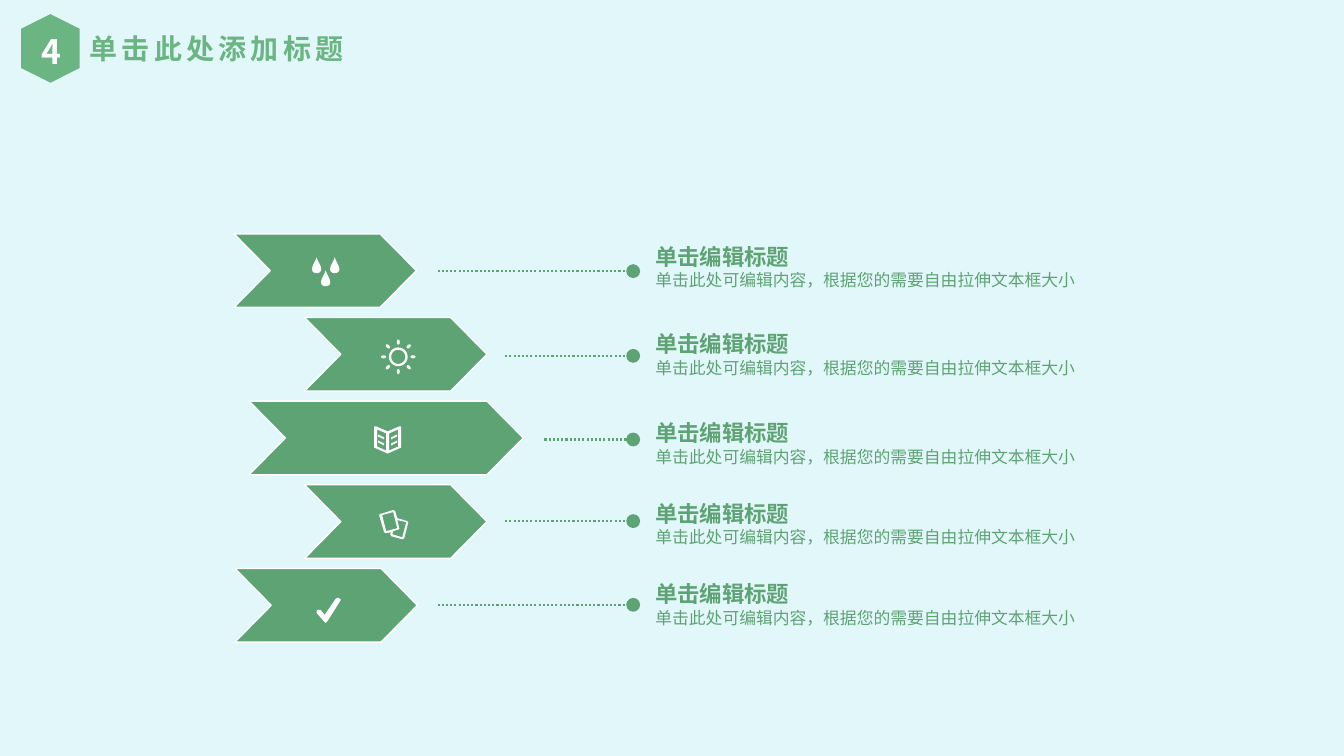
from math import cos, pi, sin

from lxml.etree import SubElement
from pptx import Presentation
from pptx.dml.color import RGBColor
from pptx.enum.dml import MSO_LINE
from pptx.enum.shapes import MSO_CONNECTOR as CONN, MSO_SHAPE as SHAPE
from pptx.enum.text import MSO_AUTO_SIZE as AUTO, PP_ALIGN as ALIGN
from pptx.oxml.ns import qn
from pptx.util import Inches, Pt

GREEN, LIGHT, WHITE, SKY = "5EA374", "6AB582", "FFFFFF", "E2F7FA"
CJK = "Noto Sans CJK SC"
HEADING = "单击编辑标题"
DETAIL = "单击此处可编辑内容，根据您的需要自由拉伸文本框大小"


def rgb(value):
    return RGBColor.from_string(value)


def paint(sp, fill, line=None):
    sp.shadow.inherit = False
    sp.fill.solid()
    sp.fill.fore_color.rgb = rgb(fill)
    if line:
        sp.line.color.rgb = rgb(line)
        sp.line.width = Pt(1)
    else:
        sp.line.fill.background()


def add_text(s, box, text, color, fmt, align=ALIGN.LEFT, inset=None, before=0, spacing=None):
    tf = s.shapes.add_textbox(*map(Inches, box)).text_frame
    tf.word_wrap = True
    tf.auto_size = AUTO.SHAPE_TO_FIT_TEXT
    if inset is not None:
        for side in ("left", "top", "right", "bottom"):
            setattr(tf, f"margin_{side}", Inches(inset))
    p = tf.paragraphs[0]
    p.alignment = align
    if before:
        p.space_before = Pt(before)
    r = p.add_run()
    r.text = text
    for key, value in fmt.items():
        setattr(r.font, key, value)
    r.font.color.rgb = rgb(color)
    props = r.font._element
    SubElement(props, qn("a:ea")).set("typeface", CJK)
    if spacing:
        props.set("spc", str(spacing))


def add_outline(s, left, top, contours, fill, line=None):
    scaled = [[(Inches(left + x), Inches(top + y)) for x, y in c] for c in contours]
    builder = s.shapes.build_freeform(*scaled[0][0])
    for i, points in enumerate(scaled):
        if i:
            builder.move_to(*points[0])
        builder.add_line_segments(points[1:], close=True)
    paint(builder.convert_to_shape(), fill, line)


def drop(cx, top):
    turns = [2 * pi * i / 32 for i in range(32)]
    return [(cx + 0.07 * sin(t) * sin(t / 2) ** 2, top + 0.08 * (1 - cos(t))) for t in turns]


def ellipse(cx, cy, rx, ry, angle=0):
    points = []
    for i in range(32):
        x, y = rx * cos(pi * i / 16), ry * sin(pi * i / 16)
        points.append((cx + x * cos(angle) - y * sin(angle),
                       cy + x * sin(angle) + y * cos(angle)))
    return points


def drops_icon():
    return [drop(0.04, 0), drop(0.22, 0), drop(0.13, 0.13)]


def sun_icon():
    c = 0.17
    angles = [pi * i / 4 for i in range(8)]
    rays = [ellipse(c + 0.146 * cos(a), c + 0.146 * sin(a), 0.025, 0.015, a) for a in angles]
    return [ellipse(c, c, r, r) for r in (0.093, 0.07)] + rays


def book_icon():
    cover = [(0, 0), (0.02, 0), (0.135, 0.05), (0.25, 0), (0.27, 0),
             (0.27, 0.21), (0.135, 0.27), (0, 0.21)]
    page = [(0.03, 0.03), (0.12, 0.07), (0.12, 0.24), (0.03, 0.2)]
    lines = [[(0.04, y), (0.1, y + 0.03), (0.1, y + 0.05), (0.04, y + 0.02)]
             for y in (0.08, 0.14)]
    left = [page] + lines
    return [cover] + left + [[(0.27 - x, y) for x, y in c] for c in left]


def cards_icon():
    return [
        [(0.01, 0.04), (0.14, 0), (0.16, 0.01), (0.18, 0.08), (0.28, 0.11), (0.29, 0.12),
         (0.25, 0.28), (0.23, 0.29), (0.12, 0.26), (0.11, 0.24), (0.12, 0.22),
         (0.07, 0.23), (0.05, 0.22), (0, 0.05)],
        [(0.03, 0.05), (0.14, 0.02), (0.18, 0.18), (0.07, 0.21)],
        [(0.23, 0.27), (0.13, 0.24), (0.14, 0.21), (0.2, 0.19), (0.2, 0.18),
         (0.18, 0.1), (0.27, 0.12)],
    ]


def check_icon():
    return [[(0.09, 0.25), (0.07, 0.23), (0, 0.15), (0, 0.13), (0.02, 0.12), (0.04, 0.12),
             (0.08, 0.17), (0.19, 0.01), (0.21, 0), (0.23, 0.01), (0.24, 0.02),
             (0.23, 0.04), (0.11, 0.23)]]


def add_header(s, left, top):
    sp = s.shapes.add_shape(SHAPE.HEXAGON, *map(Inches, (left, top, 0.68, 0.58)))
    sp.rotation = 90
    paint(sp, LIGHT)
    bold = {"bold": True, "name": CJK}
    add_text(s, (left + 0.15, top + 0.07, 0.39, 0.5), "4", WHITE,
             {**bold, "size": Pt(24)}, ALIGN.CENTER)
    add_text(s, (left + 0.63, top + 0.07, 3.01, 0.44), "单击此处添加标题", LIGHT,
             {**bold, "size": Pt(20)}, spacing=300)


def add_chevron(s, left, top, width, icon, dx, dy):
    height, tip = 0.73, 0.36
    outline = [(0, 0), (width - tip, 0), (width, height / 2), (width - tip, height),
               (0, height), (tip, height / 2)]
    add_outline(s, left, top, [outline], GREEN, WHITE)
    add_outline(s, left + dx, top + dy, icon(), WHITE)


def add_leader(s, x1, x2, y):
    c = s.shapes.add_connector(CONN.STRAIGHT, *map(Inches, (x1, y, x2, y)))
    c.line.color.rgb = rgb(GREEN)
    c.line.width = Pt(1.5)
    c.line.dash_style = MSO_LINE.ROUND_DOT
    end = SubElement(c.line._get_or_add_ln(), qn("a:tailEnd"))
    for key, value in {"type": "oval", "w": "lg", "len": "lg"}.items():
        end.set(key, value)
    SubElement(c._element.spPr, qn("a:effectLst"))


def add_caption(s, left, top):
    add_text(s, (left, top, 1.64, 0.27), HEADING, GREEN,
             {"size": Pt(16), "bold": True, "name": "Arial"}, inset=0, before=3.2)
    add_text(s, (left, top + 0.27, 4.31, 0.2), DETAIL, GREEN,
             {"size": Pt(12), "name": "Arial"}, inset=0, before=2.4)


ROWS = [
    (2.32, 1.81, drops_icon, 0.78, 0.23, 4.34, 2.69, 2.41),
    (3.02, 1.81, sun_icon, 0.76, 0.22, 5.01, 3.53, 3.28),
    (2.47, 2.72, book_icon, 1.24, 0.25, 5.4, 4.36, 4.16),
    (3.02, 1.81, cards_icon, 0.74, 0.25, 5.01, 5.17, 4.96),
    (2.33, 1.81, check_icon, 0.81, 0.29, 4.34, 6, 5.76),
]


def main():
    prs = Presentation()
    prs.slide_width, prs.slide_height = Inches(13.33), Inches(7.5)
    s = prs.slides.add_slide(prs.slide_layouts[6])
    s.background.fill.solid()
    s.background.fill.fore_color.rgb = rgb(SKY)
    add_header(s, 0.16, 0.19)
    for i, (left, width, icon, dx, dy, start, line_y, text_top) in enumerate(ROWS):
        add_chevron(s, left, 2.32 + 0.83 * i, width, icon, dx, dy)
        add_leader(s, start, 6.28, line_y)
        add_caption(s, 6.5, text_top)
    prs.save("out.pptx")


if __name__ == "__main__":
    main()
